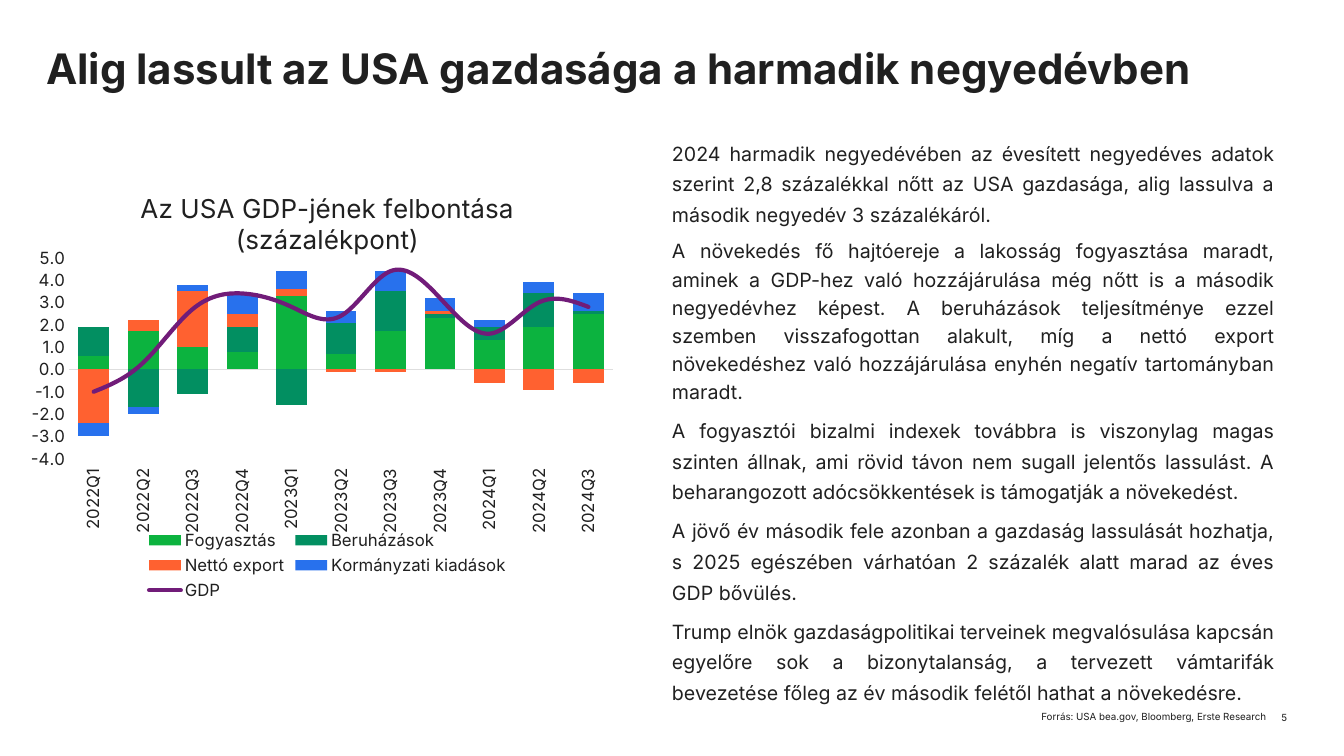
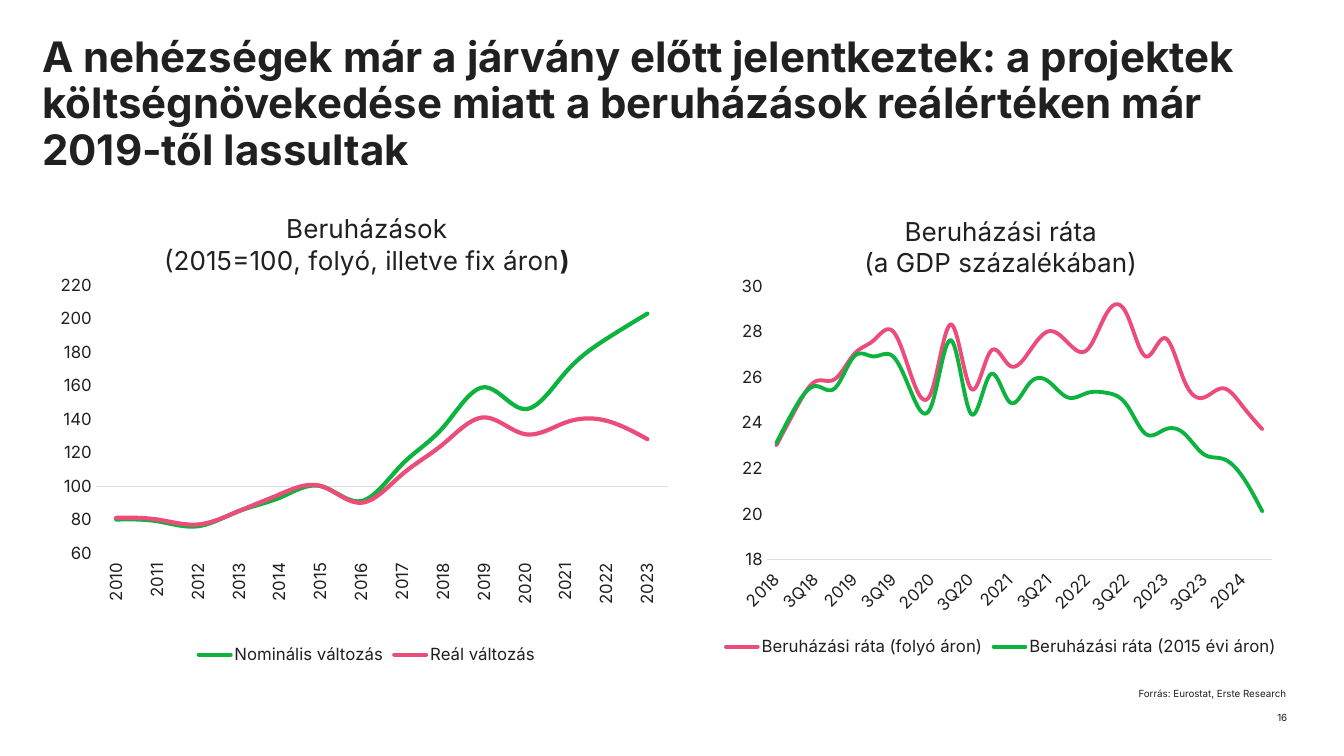
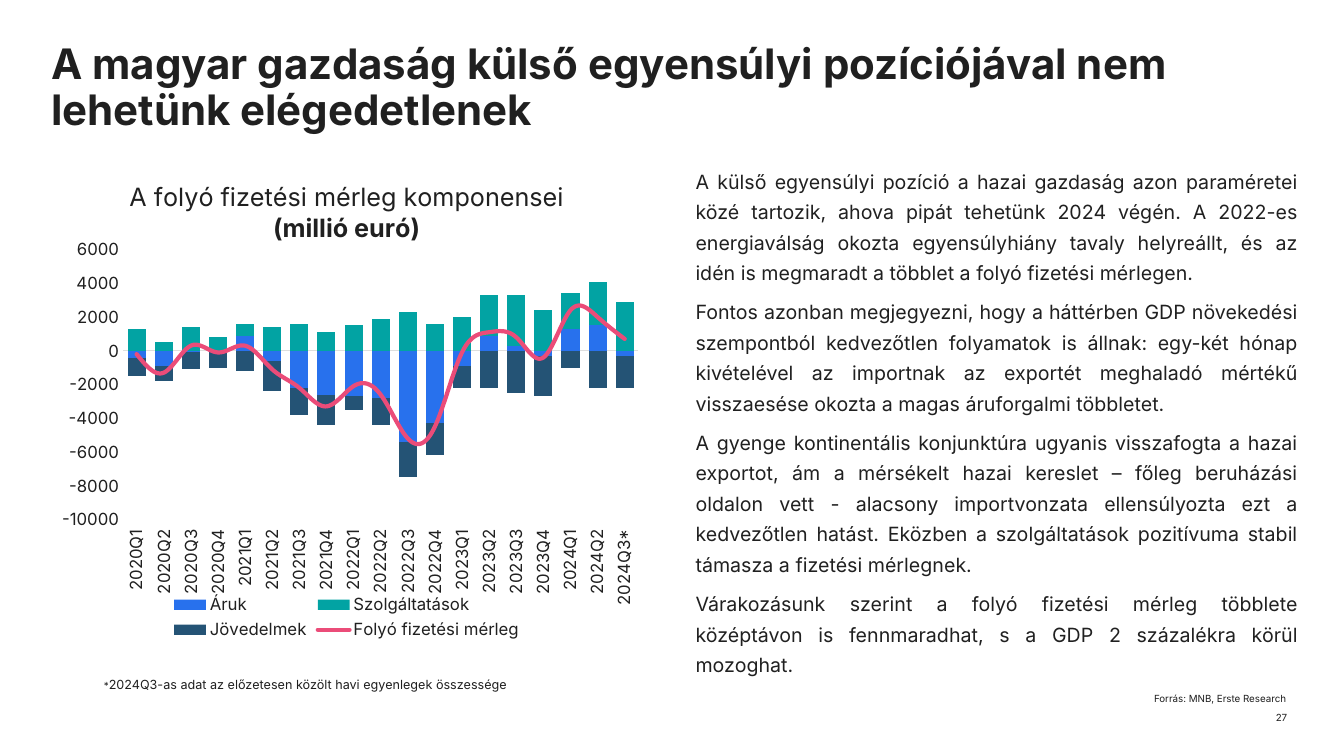
from pptx import Presentation
from pptx.chart.data import CategoryChartData
from pptx.dml.color import RGBColor
from pptx.enum.chart import (XL_CHART_TYPE, XL_LEGEND_POSITION, XL_MARKER_STYLE,
                             XL_TICK_LABEL_POSITION, XL_TICK_MARK)
from pptx.enum.text import MSO_ANCHOR, MSO_AUTO_SIZE, PP_ALIGN
from pptx.oxml import parse_xml
from pptx.oxml.ns import nsdecls, qn
from pptx.util import Pt

STACKED, LINE = XL_CHART_TYPE.COLUMN_STACKED, XL_CHART_TYPE.LINE
BOTTOM = XL_LEGEND_POSITION.BOTTOM
NO_MARKER = XL_MARKER_STYLE.NONE
LOW = XL_TICK_LABEL_POSITION.LOW
NO_TICK = XL_TICK_MARK.NONE
TOP, FOOT = MSO_ANCHOR.TOP, MSO_ANCHOR.BOTTOM
NO_FIT = MSO_AUTO_SIZE.NONE
LEFT, RIGHT, JUSTIFY = PP_ALIGN.LEFT, PP_ALIGN.RIGHT, PP_ALIGN.JUSTIFY

FONT = "Inter"
COLORS = {
    "text": "202020", "axis": "DEDEDE", "green": "0CB33F", "dark_green": "028F61",
    "orange": "FF6130", "blue": "2871ED", "purple": "711C79", "pink": "EB4C79",
    "teal": "02A3A3", "navy": "245375",
}


def color(name):
    return RGBColor.from_string(COLORS[name])


def style_font(font, size, bold=False):
    font.name, font.size, font.bold = FONT, Pt(size), bold
    font.color.rgb = color("text")


def place(shape, box):
    shape.left, shape.top, shape.width, shape.height = (Pt(length) for length in box)


def prepare_frame(frame, anchor):
    frame.margin_left = frame.margin_right = frame.margin_top = frame.margin_bottom = 0
    frame.word_wrap = True
    frame.auto_size = NO_FIT
    frame.vertical_anchor = anchor


# Text regions
def add_text(slide, box, paragraphs, size, align=LEFT, anchor=TOP, spacings=(1,), after=0):
    """Each paragraph takes its line spacing from spacings; the last one is repeated."""
    frame = slide.shapes.add_textbox(*(Pt(length) for length in box)).text_frame
    prepare_frame(frame, anchor)
    for index, text in enumerate(paragraphs):
        paragraph = frame.add_paragraph() if index else frame.paragraphs[0]
        paragraph.text = text
        paragraph.alignment = align
        paragraph.line_spacing = spacings[min(index, len(spacings) - 1)]
        paragraph.space_after = Pt(after)
        style_font(paragraph.runs[0].font, size)
    return frame


def add_page(presentation, title, title_box, number, source, source_box):
    slide = presentation.slides.add_slide(presentation.slide_layouts[5])
    place(slide.shapes.title, title_box)
    frame = slide.shapes.title.text_frame
    prepare_frame(frame, TOP)
    frame.text = title
    paragraph = frame.paragraphs[0]
    paragraph.alignment, paragraph.line_spacing = LEFT, 0.92
    style_font(paragraph.runs[0].font, 30, True)
    add_text(slide, (890, 508.3, 29.5, 10), [number], 7, RIGHT)
    add_text(slide, source_box, [source], 7, RIGHT, FOOT, (1.07,))
    return slide


# Chart parts
def set_plot_area(chart, fractions):
    plot_area = chart.element.find(".//" + qn("c:plotArea"))
    for layout in plot_area.findall(qn("c:layout")):
        plot_area.remove(layout)
    sizes = "".join(f'<c:{tag} val="{value}"/>' for tag, value in zip("xywh", fractions))
    plot_area.insert(0, parse_xml(
        f'<c:layout {nsdecls("c")}><c:manualLayout><c:layoutTarget val="inner"/>'
        f'<c:xMode val="edge"/><c:yMode val="edge"/>{sizes}</c:manualLayout></c:layout>'))


def set_chart_title(chart, lines, size):
    """Each line is a list of (text, bold) runs."""
    frame = chart.chart_title.text_frame
    for index, runs in enumerate(lines):
        paragraph = frame.add_paragraph() if index else frame.paragraphs[0]
        for text, bold in runs:
            run = paragraph.add_run()
            run.text = text
            style_font(run.font, size, bold)
    chart.chart_title.include_in_layout = False


def move_last_series_to_line(chart):
    bars = chart.element.find(".//" + qn("c:barChart"))
    series = bars.findall(qn("c:ser"))[-1]
    for tag in ("c:invertIfNegative",):
        for child in series.findall(qn(tag)):
            series.remove(child)
    axes = "".join(f'<c:axId val="{axis.get("val")}"/>' for axis in bars.findall(qn("c:axId")))
    line_chart = parse_xml(
        f'<c:lineChart {nsdecls("c")}><c:grouping val="standard"/><c:varyColors val="0"/>'
        f'<c:marker val="1"/>{axes}</c:lineChart>')
    line_chart.insert(2, series)
    bars.addnext(line_chart)


def style_line(series, name, width):
    series.smooth = True
    series.marker.style = NO_MARKER
    series.format.line.color.rgb = color(name)
    series.format.line.width = Pt(width)
    series.format.line._ln.set("cap", "rnd")


def style_axes(chart, scale, number_format, rotation, skip, crossing):
    category, value = chart.category_axis, chart.value_axis
    for axis in (category, value):
        axis.has_major_gridlines = False
        axis.major_tick_mark = axis.minor_tick_mark = NO_TICK
        style_font(axis.tick_labels.font, 12)
    category.tick_label_position = LOW
    category.format.line.color.rgb = color("axis")
    category.format.line.width = Pt(0.75)
    body = category._element.find(qn("c:txPr")).find(qn("a:bodyPr"))
    body.set("rot", str(rotation * 60000))
    body.set("vert", "horz")
    category._element.find(qn("c:lblOffset")).addnext(
        parse_xml(f'<c:tickLblSkip {nsdecls("c")} val="{skip}"/>'))
    value.minimum_scale, value.maximum_scale, value.major_unit = scale
    value.tick_labels.number_format = number_format
    value.tick_labels.number_format_is_linked = False
    value.format.line.fill.background()
    if crossing is not None:
        value.crosses_at = crossing


def add_chart(slide, box, kind, title, title_size, categories, series, plot, scale,
              number_format="0", gap=None, rotation=-90, skip=1, crossing=None, width=3):
    """Series are (name, color, values); in a stacked chart the last one is a line."""
    data = CategoryChartData()
    data.categories = categories
    for name, _, values in series:
        data.add_series(name, values)
    chart = slide.shapes.add_chart(kind, *(Pt(length) for length in box), data).chart
    style_font(chart.font, 10)
    set_chart_title(chart, title, title_size)
    set_plot_area(chart, plot)
    style_axes(chart, scale, number_format, rotation, skip, crossing)
    if kind == STACKED:
        chart.plots[0].gap_width, chart.plots[0].overlap = gap, 100
        move_last_series_to_line(chart)
    for chart_plot in chart.plots:
        chart_plot.vary_by_categories = False
    drawn = [item for chart_plot in chart.plots for item in chart_plot.series]
    for index, (item, (_, name, _)) in enumerate(zip(drawn, series)):
        if kind == LINE or index == len(series) - 1:
            style_line(item, name, width)
        else:
            item.format.fill.solid()
            item.format.fill.fore_color.rgb = color(name)
            item.invert_if_negative = False
    chart.has_legend = True
    chart.legend.position = BOTTOM
    chart.legend.include_in_layout = False
    style_font(chart.legend.font, 12)


def quarters(first_year, count):
    return [f"{first_year + index // 4}Q{index % 4 + 1}" for index in range(count)]


# Slides
def add_usa_slide(presentation):
    slide = add_page(presentation, "Alig lassult az USA gazdasága a harmadik negyedévben",
                     (33, 34, 895, 60), "5",
                     "Forrás: USA bea.gov, Bloomberg, Erste Research", (474, 499.7, 430.5, 16.5))
    add_text(slide, (480, 96, 430.5, 406), [
        "2024 harmadik negyedévében az évesített negyedéves adatok szerint 2,8 százalékkal nőtt "
        "az USA gazdasága, alig lassulva a második negyedév 3 százalékáról.",
        "A növekedés fő hajtóereje a lakosság fogyasztása maradt, aminek a GDP-hez való "
        "hozzájárulása még nőtt is a második negyedévhez képest. A beruházások teljesítménye "
        "ezzel szemben visszafogottan alakult, míg a nettó export növekedéshez való "
        "hozzájárulása enyhén negatív tartományban maradt.",
        "A fogyasztói bizalmi indexek továbbra is viszonylag magas szinten állnak, ami rövid "
        "távon nem sugall jelentős lassulást. A beharangozott adócsökkentések is támogatják "
        "a növekedést.",
        "A jövő év második fele azonban a gazdaság lassulását hozhatja, s 2025 egészében "
        "várhatóan 2 százalék alatt marad az éves GDP bővülés.",
        "Trump elnök gazdaságpolitikai terveinek megvalósulása kapcsán egyelőre sok a "
        "bizonytalanság, a tervezett vámtarifák bevezetése főleg az év második felétől hathat "
        "a növekedésre.",
    ], 14, JUSTIFY, TOP, (1.3, 1.2, 1.3), 6)
    add_chart(slide, (18.7, 124.5, 430.5, 307.5), STACKED,
              [[("Az USA GDP-jének felbontása", False)], [("(százalékpont)", False)]], 18.6,
              quarters(2022, 11), [
        ("Fogyasztás", "green", (0.6, 1.7, 1, 0.8, 3.3, 0.7, 1.7, 2.3, 1.3, 1.9, 2.5)),
        ("Beruházások", "dark_green",
         (1.3, -1.7, -1.1, 1.1, -1.6, 1.4, 1.8, 0.2, 0.6, 1.5, 0.1)),
        ("Nettó export", "orange",
         (-2.4, 0.5, 2.5, 0.6, 0.3, -0.1, -0.1, 0.1, -0.6, -0.9, -0.6)),
        ("Kormányzati kiadások", "blue",
         (-0.6, -0.3, 0.3, 0.9, 0.8, 0.5, 0.9, 0.6, 0.3, 0.5, 0.8)),
        ("GDP", "purple", (-1, 0.3, 2.7, 3.4, 2.8, 2.4, 4.4, 3.2, 1.6, 3, 2.8)),
    ], (0.071, 0.194, 0.903, 0.467), (-4, 5, 1), "0.0", gap=60)


def add_investment_slide(presentation):
    slide = add_page(presentation,
                     "A nehézségek már a járvány előtt jelentkeztek: a projektek "
                     "költségnövekedése miatt a beruházások reálértéken már 2019-től lassultak",
                     (30.2, 25.2, 878.4, 96.5), "16",
                     "Forrás: Eurostat, Erste Research", (488.2, 483.1, 430.5, 16.5))
    add_chart(slide, (35.3, 138.2, 453.6, 339.8), LINE,
              [[("Beruházások", False)],
               [("(2015=100, folyó, illetve fix áron", False), (")", True)]], 18.6,
              [str(year) for year in range(2010, 2024)], [
        ("Nominális változás", "green",
         (80, 79, 76, 85, 93, 100, 91, 113, 135, 159, 146, 168, 188, 203)),
        ("Reál változás", "pink",
         (81, 80, 77, 85, 95, 100, 90, 107, 125, 141, 131, 138, 139, 128)),
    ], (0.073, 0.193, 0.901, 0.563), (60, 220, 20), crossing=100)
    periods = [f"{index % 4 + 1}Q{18 + index // 4}" if index % 4 else str(2018 + index // 4)
               for index in range(26)]
    add_chart(slide, (488.2, 140.4, 453.6, 331.9), LINE,
              [[("Beruházási ráta", False)], [("(a GDP százalékában)", False)]], 18.6,
              periods, [
        ("Beruházási ráta (folyó áron)", "pink",
         (23, 24.6, 25.8, 25.9, 27, 27.6, 28, 25.9, 25.4, 28.3, 25.5, 27.1, 26.5, 27.1, 28,
          27.5, 27.2, 28.8, 28.8, 26.9, 27.7, 25.8, 25.1, 25.5, 24.7, 23.7)),
        ("Beruházási ráta (2015 évi áron)", "green",
         (23.1, 24.7, 25.6, 25.5, 26.9, 26.9, 26.9, 25.2, 24.8, 27.6, 24.4, 26.1, 24.9, 25.7,
          25.8, 25.1, 25.3, 25.3, 24.8, 23.5, 23.7, 23.5, 22.6, 22.4, 21.6, 20.1)),
    ], (0.131, 0.192, 0.796, 0.589), (18, 30, 2), rotation=-45, skip=2, width=2.75)


def add_balance_slide(presentation):
    slide = add_page(presentation,
                     "A magyar gazdaság külső egyensúlyi pozíciójával nem lehetünk elégedetlenek",
                     (36.7, 30.2, 903.6, 60), "27",
                     "Forrás: MNB, Erste Research", (488.2, 486.7, 430.5, 16.5))
    add_text(slide, (496.8, 116, 430.5, 365.8), [
        "A külső egyensúlyi pozíció a hazai gazdaság azon paraméretei közé tartozik, ahova "
        "pipát tehetünk 2024 végén. A 2022-es energiaválság okozta egyensúlyhiány tavaly "
        "helyreállt, és az idén is megmaradt a többlet a folyó fizetési mérlegen.",
        "Fontos azonban megjegyezni, hogy a háttérben GDP növekedési szempontból kedvezőtlen "
        "folyamatok is állnak: egy-két hónap kivételével az importnak az exportét meghaladó "
        "mértékű visszaesése okozta a magas áruforgalmi többletet.",
        "A gyenge kontinentális konjunktúra ugyanis visszafogta a hazai exportot, ám a "
        "mérsékelt hazai kereslet – főleg beruházási oldalon vett - alacsony importvonzata "
        "ellensúlyozta ezt a kedvezőtlen hatást. Eközben a szolgáltatások pozitívuma stabil "
        "támasza a fizetési mérlegnek.",
        "Várakozásunk szerint a folyó fizetési mérleg többlete középtávon is fennmaradhat, "
        "s a GDP 2 százalékra körül mozoghat.",
    ], 14, JUSTIFY, TOP, (1.3,), 6)
    periods = quarters(2020, 19)
    periods[-1] += "*"
    add_chart(slide, (32.4, 116, 430.5, 344.2), STACKED,
              [[("A folyó fizetési mérleg komponensei", False)], [("(millió euró)", True)]], 18,
              periods, [
        ("Áruk", "blue", (-400, -900, -100, -100, 900, -600, -2200, -2600, -2700, -2800, -5400,
                          -4300, -900, 900, 300, -300, 1300, 1500, -300)),
        ("Szolgáltatások", "teal", (1300, 500, 1400, 800, 700, 1400, 1600, 1100, 1500, 1900,
                                    2300, 1600, 2000, 2400, 3000, 2400, 2100, 2600, 2900)),
        ("Jövedelmek", "navy", (-1100, -900, -1000, -900, -1200, -1800, -1600, -1800, -800,
                                -1600, -2100, -1900, -1300, -2200, -2500, -2400, -1000, -2200,
                                -1900)),
        ("Folyó fizetési mérleg", "pink",
         (-200, -1300, 300, -100, 300, -1100, -2200, -3300, -2100, -2600, -5200, -4500, -100,
          1100, 800, -400, 2400, 2000, 700)),
    ], (0.129, 0.181, 0.855, 0.56), (-10000, 6000, 2000), gap=50)
    # Footnote with a smaller asterisk
    note = add_text(slide, (74.2, 478.1, 430.5, 16.5), ["*"], 7, LEFT, FOOT, (1.07,))
    run = note.paragraphs[0].add_run()
    run.text = "2024Q3-as adat az előzetesen közölt havi egyenlegek összessége"
    style_font(run.font, 9)


def main():
    presentation = Presentation()
    presentation.slide_width, presentation.slide_height = Pt(960), Pt(540)
    add_usa_slide(presentation)
    add_investment_slide(presentation)
    add_balance_slide(presentation)
    presentation.save("out.pptx")


if __name__ == "__main__":
    main()
